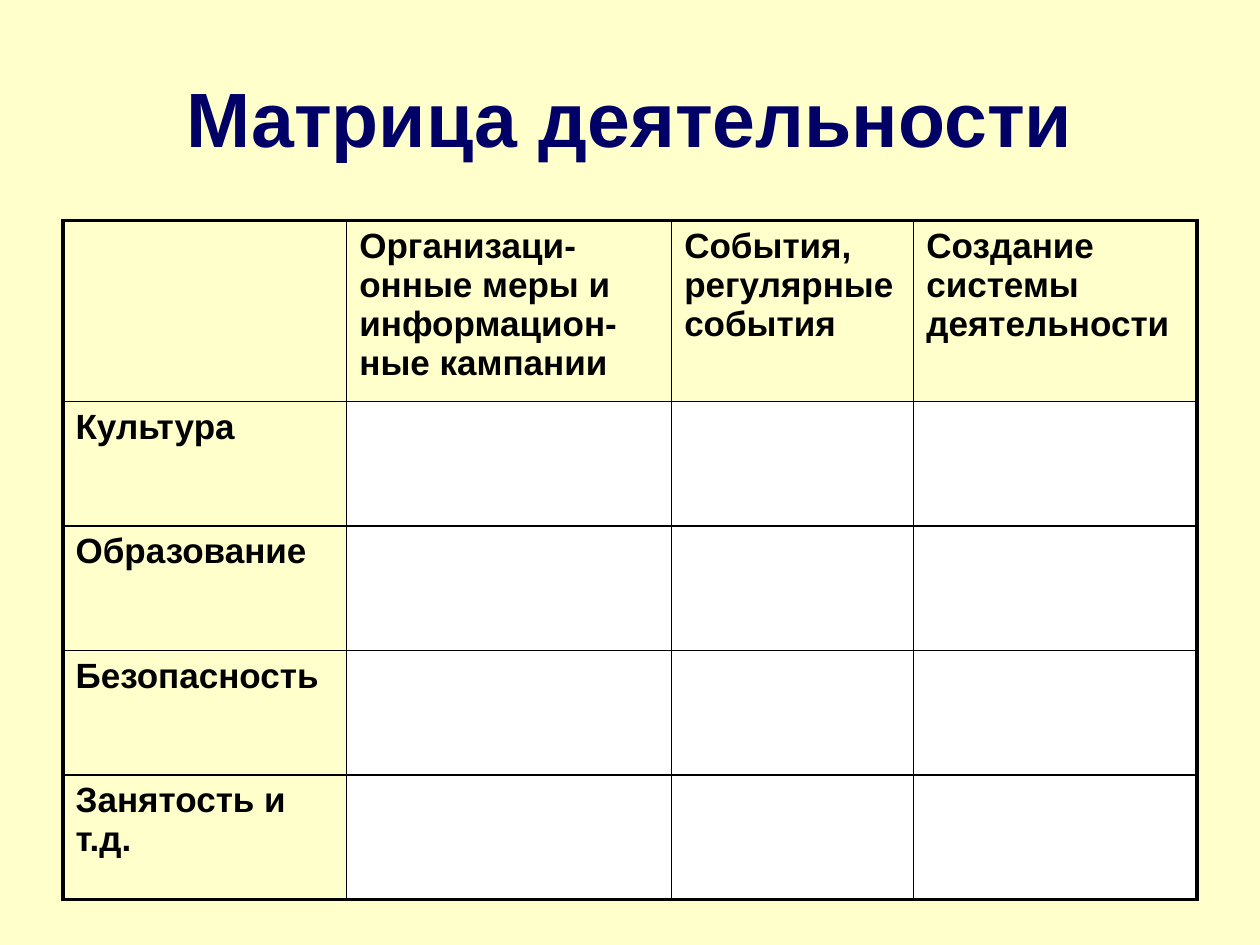
from dataclasses import dataclass

from lxml.etree import SubElement
from pptx import Presentation
from pptx.dml.color import RGBColor as Color
from pptx.enum.text import MSO_ANCHOR as Anchor, PP_ALIGN as Align
from pptx.oxml.ns import qn
from pptx.util import Cm, Pt


@dataclass(frozen=True)
class Theme:
    font: str = "Arial"
    background: str = "FFFFCC"
    title: str = "000066"
    ink: str = "000000"
    open_cell: str = "FFFFFF"
    title_size: float = 44
    table_size: float = 20
    outer_line: float = 2.25
    inner_line: float = 1


THEME = Theme()

MEASURES = [
    "Организаци-онные меры и информацион-ные кампании",
    "События, регулярные события",
    "Создание системы деятельности",
]
AREAS = ["Культура", "Образование", "Безопасность", "Занятость и т.д."]
COLUMN_WIDTHS = [5.72, 6.55, 4.88, 5.71]
ROW_HEIGHT = 2.51
TABLE_HEIGHT = 13.69  # leaves room for the header row to grow with its text


def style_text(frame, size, color, align=Align.LEFT):
    for para in frame.paragraphs:
        para.alignment = align
        for span in para.runs:
            span.font.name = THEME.font
            span.font.size = Pt(size)
            span.font.bold = True
            span.font.color.rgb = Color.from_string(color)


def add_title(page, text, left, top, width, height):
    box = page.shapes.add_textbox(Cm(left), Cm(top), Cm(width), Cm(height))
    frame = box.text_frame
    frame.word_wrap = True
    frame.vertical_anchor = Anchor.MIDDLE
    frame.text = text
    style_text(frame, THEME.title_size, THEME.title, Align.CENTER)


def set_borders(cell, outer_sides):
    """Draw all four sides, with a heavier line on the table's outer edge."""
    properties = cell._tc.get_or_add_tcPr()
    for position, side in enumerate("LRTB"):
        points = THEME.outer_line if side in outer_sides else THEME.inner_line
        line = properties.makeelement(qn(f"a:ln{side}"), {"w": str(Pt(points))})
        fill = SubElement(line, qn("a:solidFill"))
        SubElement(fill, qn("a:srgbClr"), val=THEME.ink)
        properties.insert(position, line)


def add_matrix(page, left, top):
    rows = [["", *MEASURES]] + [[area] + [""] * len(MEASURES) for area in AREAS]
    holder = page.shapes.add_table(
        len(rows), len(COLUMN_WIDTHS), Cm(left), Cm(top),
        Cm(sum(COLUMN_WIDTHS)), Cm(TABLE_HEIGHT),
    )
    table = holder.table
    table.first_row = table.horz_banding = False

    for column, width in zip(table.columns, COLUMN_WIDTHS):
        column.width = Cm(width)
    for row in table.rows:
        row.height = Cm(ROW_HEIGHT)
    holder.height = Cm(TABLE_HEIGHT)

    last_row, last_column = len(rows) - 1, len(COLUMN_WIDTHS) - 1
    for r, texts in enumerate(rows):
        for c, text in enumerate(texts):
            cell = table.cell(r, c)
            cell.text_frame.text = text
            style_text(cell.text_frame, THEME.table_size, THEME.ink)
            # Headings show the page colour, the cells to fill in are white
            if r and c:
                cell.fill.solid()
                cell.fill.fore_color.rgb = Color.from_string(THEME.open_cell)
            else:
                cell.fill.background()
            edges = {"L": c == 0, "R": c == last_column, "T": r == 0, "B": r == last_row}
            set_borders(cell, [side for side, outer in edges.items() if outer])


def main():
    deck = Presentation()
    deck.slide_width, deck.slide_height = Cm(25.4), Cm(19.05)
    page = deck.slides.add_slide(deck.slide_layouts[6])
    page.background.fill.solid()
    page.background.fill.fore_color.rgb = Color.from_string(THEME.background)

    # Title
    add_title(page, "Матрица деятельности", 1.27, 0.76, 22.86, 3.18)
    # Matrix of areas and measures
    add_matrix(page, 1.27, 4.45)

    deck.save("out.pptx")


if __name__ == "__main__":
    main()
